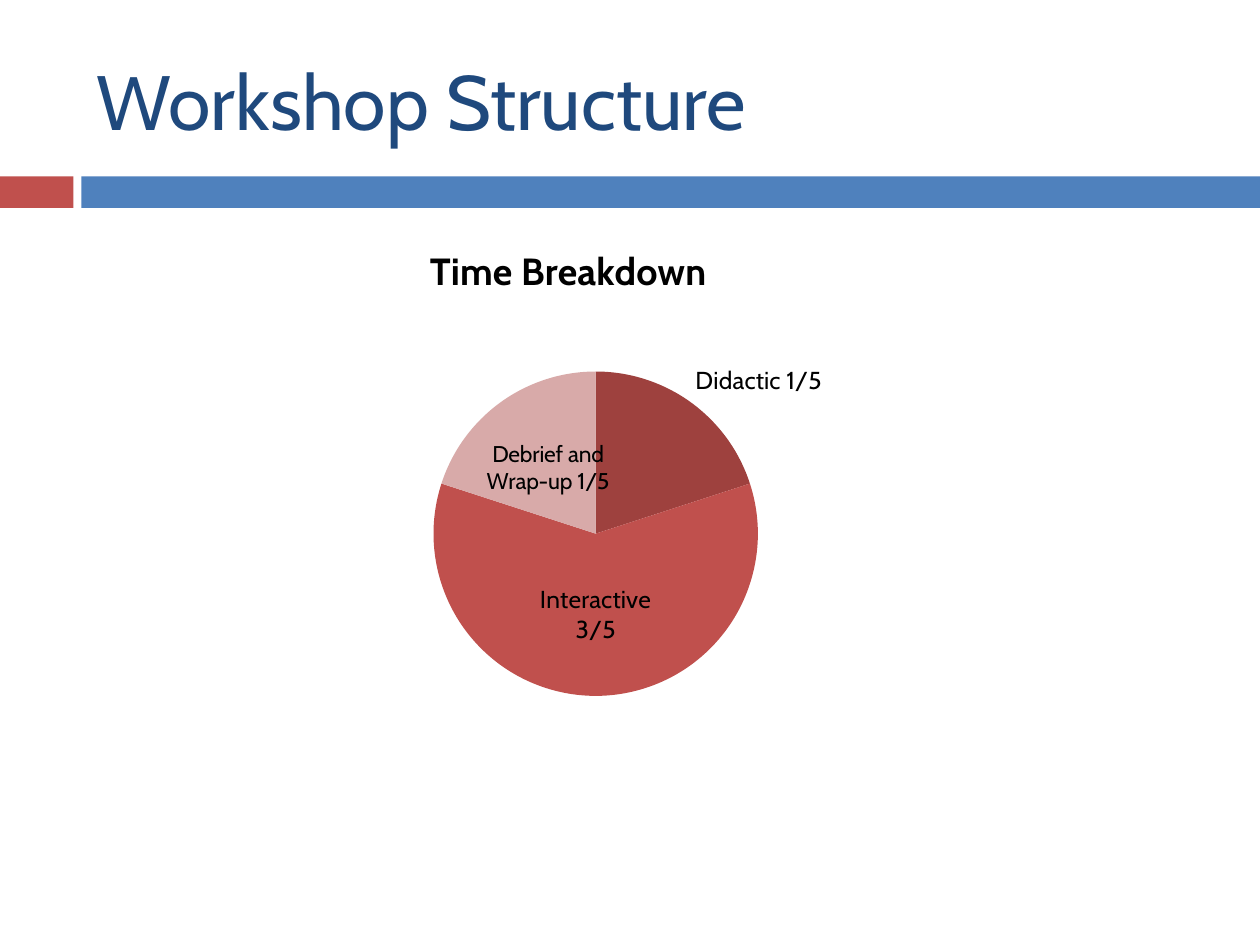
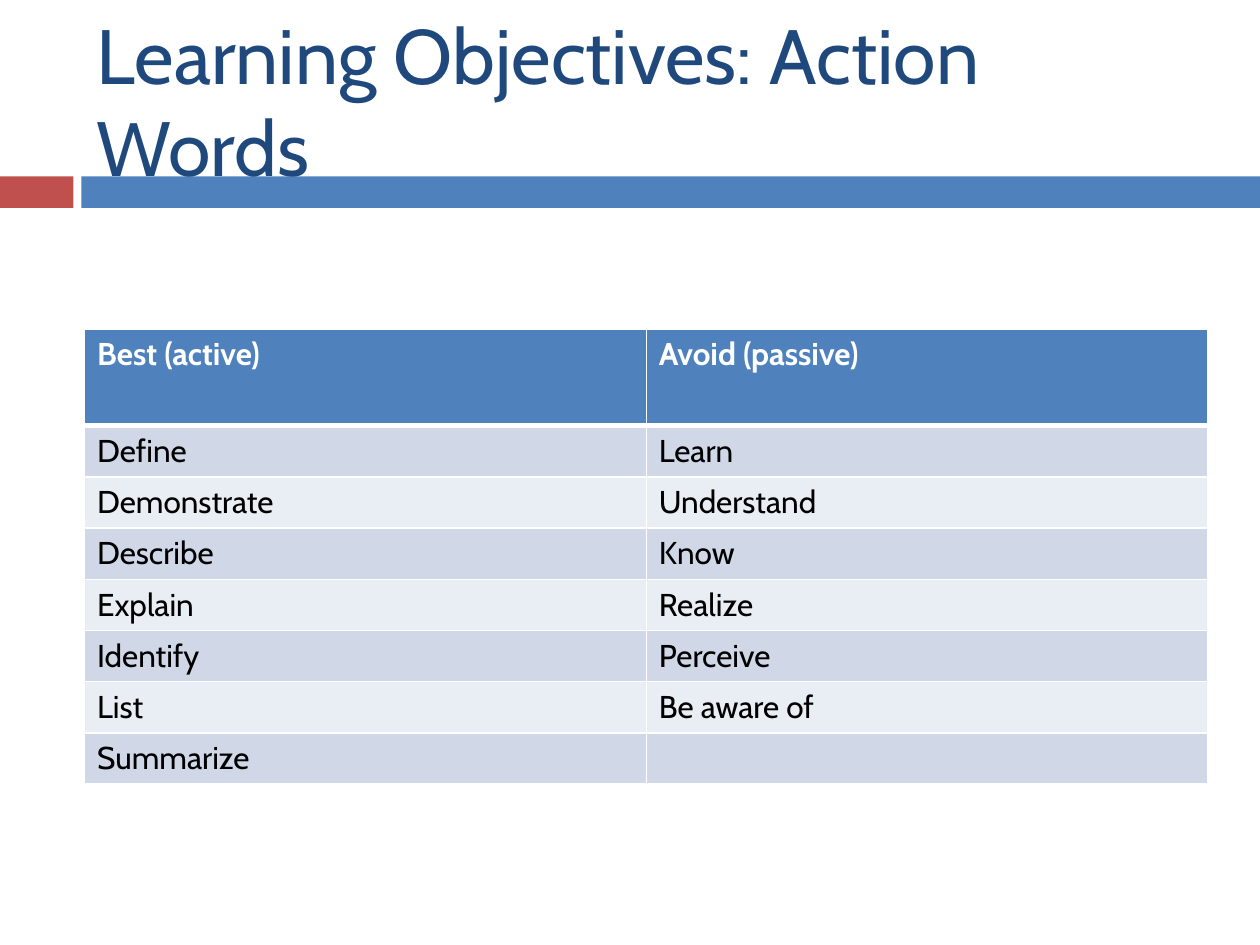
from lxml import etree
from pptx import Presentation
from pptx import util as u
from pptx.chart import data
from pptx.dml.color import RGBColor
from pptx.enum import chart as ch, shapes, text
from pptx.oxml import ns

FONT = "Cabin"
NAVY = RGBColor(0x1F, 0x49, 0x7D)
BLUE = RGBColor(0x4F, 0x81, 0xBD)
RED = RGBColor(0xC0, 0x50, 0x4D)
DARK_RED = RGBColor(0x9E, 0x41, 0x3E)
PINK = RGBColor(0xD8, 0xAA, 0xA9)
ROW_DARK = RGBColor(0xD0, 0xD8, 0xE8)
ROW_LIGHT = RGBColor(0xE9, 0xED, 0xF4)
WHITE = RGBColor(0xFF, 0xFF, 0xFF)
BLACK = RGBColor(0, 0, 0)

COLS, ROWS = 120, 90
LEFT, WIDTH = 8.05, 107
BAND_TOP, BAND_HEIGHT = 16.8, 3


class Deck:
    def __init__(self):
        self.prs = Presentation()
        self.prs.slide_width, self.prs.slide_height = u.Inches(10), u.Inches(7.5)
        self.s = None

    def box(self, col, row, cols, rows):
        """Turn grid columns and rows into left, top, width and height."""
        dx, dy = self.prs.slide_width / COLS, self.prs.slide_height / ROWS
        return [u.Emu(round(v)) for v in (col * dx, row * dy, cols * dx, rows * dy)]

    def style(self, font, size, color, bold=False):
        font.name, font.size, font.bold = FONT, u.Pt(size), bold
        font.color.rgb = color

    def slide(self, title):
        self.s = self.prs.slides.add_slide(self.prs.slide_layouts[6])
        self.band(0, 7, RED)
        self.band(7.75, COLS - 7.75, BLUE)
        self.title(title)

    def band(self, col, cols, color):
        sp = self.s.shapes.add_shape(shapes.MSO_SHAPE.RECTANGLE,
                                     *self.box(col, BAND_TOP, cols, BAND_HEIGHT))
        sp.shadow.inherit = False
        sp.fill.solid()
        sp.fill.fore_color.rgb = color
        sp.line.fill.background()

    def title(self, words):
        tf = self.s.shapes.add_textbox(*self.box(LEFT, 3, WIDTH, 13)).text_frame
        tf.word_wrap = True
        tf.vertical_anchor = text.MSO_ANCHOR.MIDDLE
        tf.text = words
        self.style(tf.paragraphs[0].runs[0].font, 44, NAVY)

    def pie(self, title, wedges, box):
        """Draw a pie from (label, value, colour, label position, label size) wedges."""
        chart_data = data.CategoryChartData()
        chart_data.categories = [w[0] for w in wedges]
        chart_data.add_series(title, [w[1] for w in wedges])
        chart = self.s.shapes.add_chart(ch.XL_CHART_TYPE.PIE, *self.box(*box), chart_data).chart
        self.style(chart.font, 18, BLACK)
        chart.has_legend = False
        chart.has_title = True
        tf = chart.chart_title.text_frame
        tf.text = title
        self.style(tf.paragraphs[0].runs[0].font, 21.6, BLACK, True)
        self.place(chart.chart_title._element, x=0.31, y=0.03)
        plot = chart.plots[0]
        plot.vary_by_categories = True
        self.place(chart._chartSpace.chart.plotArea, x=0.32, y=0.27, w=0.43, h=0.58)

        series = plot.series[0]
        series.data_labels.show_category_name = True
        series.data_labels.show_value = False
        for i, (label, _, color, position, size) in enumerate(wedges):
            point = series.points[i]
            point.format.fill.solid()
            point.format.fill.fore_color.rgb = color
            point.format.line.fill.background()
            tf = point.data_label.text_frame
            tf.text = label
            self.style(tf.paragraphs[0].runs[0].font, size, BLACK)
            point.data_label.position = position

    def place(self, part, **shares):
        """Fix a chart part at the given shares of the chart's size."""
        layout = part.find(ns.qn("c:layout"))
        if layout is None:
            layout = etree.Element(ns.qn("c:layout"))
            tx = part.find(ns.qn("c:tx"))
            part.insert(0 if tx is None else part.index(tx) + 1, layout)
        manual = etree.SubElement(layout, ns.qn("c:manualLayout"))
        settings = {"layoutTarget": "inner"} if "w" in shares else {}
        settings.update(xMode="edge", yMode="edge", **shares)
        for name, value in settings.items():
            etree.SubElement(manual, ns.qn(f"c:{name}"), val=str(value))

    def table(self, rows, top, head_rows, body_rows):
        height = head_rows + body_rows * (len(rows) - 1)
        table = self.s.shapes.add_table(len(rows), len(rows[0]),
                                        *self.box(LEFT, top, WIDTH, height)).table
        for i, words in enumerate(rows):
            head = i == 0
            table.rows[i].height = self.box(0, 0, 0, head_rows if head else body_rows)[3]
            fill = BLUE if head else (ROW_LIGHT, ROW_DARK)[i % 2]
            for j, word in enumerate(words):
                cell = table.cell(i, j)
                cell.text = word
                p = cell.text_frame.paragraphs[0]
                self.style(p.font, 18, WHITE if head else BLACK, head)
                for r in p.runs:
                    self.style(r.font, 18, WHITE if head else BLACK, head)
                self.borders(cell, top=3 if i == 1 else 1, bottom=3 if head else 1)
                cell.fill.solid()
                cell.fill.fore_color.rgb = fill

    def borders(self, cell, top, bottom):
        tc_pr = cell._tc.get_or_add_tcPr()
        for side, width in (("L", 1), ("R", 1), ("T", top), ("B", bottom)):
            ln = etree.SubElement(tc_pr, ns.qn(f"a:ln{side}"), w=str(u.Pt(width)))
            fill = etree.SubElement(ln, ns.qn("a:solidFill"))
            etree.SubElement(fill, ns.qn("a:srgbClr"), val=str(WHITE))


def main():
    deck = Deck()
    position = ch.XL_LABEL_POSITION

    deck.slide("Workshop Structure")
    deck.pie("Time Breakdown", [
        ("Didactic 1/5", 20, DARK_RED, position.OUTSIDE_END, 14),
        ("Interactive 3/5", 60, RED, position.CENTER, 14),
        ("Debrief and Wrap-up 1/5", 20, PINK, position.CENTER, 13),
    ], box=(17.64, 21, 73.08, 53.28))

    deck.slide("Learning Objectives: Action Words")
    deck.table([
        ("Best (active)", "Avoid (passive)"),
        ("Define", "Learn"),
        ("Demonstrate", "Understand"),
        ("Describe", "Know"),
        ("Explain", "Realize"),
        ("Identify", "Perceive"),
        ("List", "Be aware of"),
        ("Summarize", ""),
    ], top=31.35, head_rows=9.2, body_rows=4.88)

    deck.prs.save("out.pptx")


if __name__ == "__main__":
    main()
